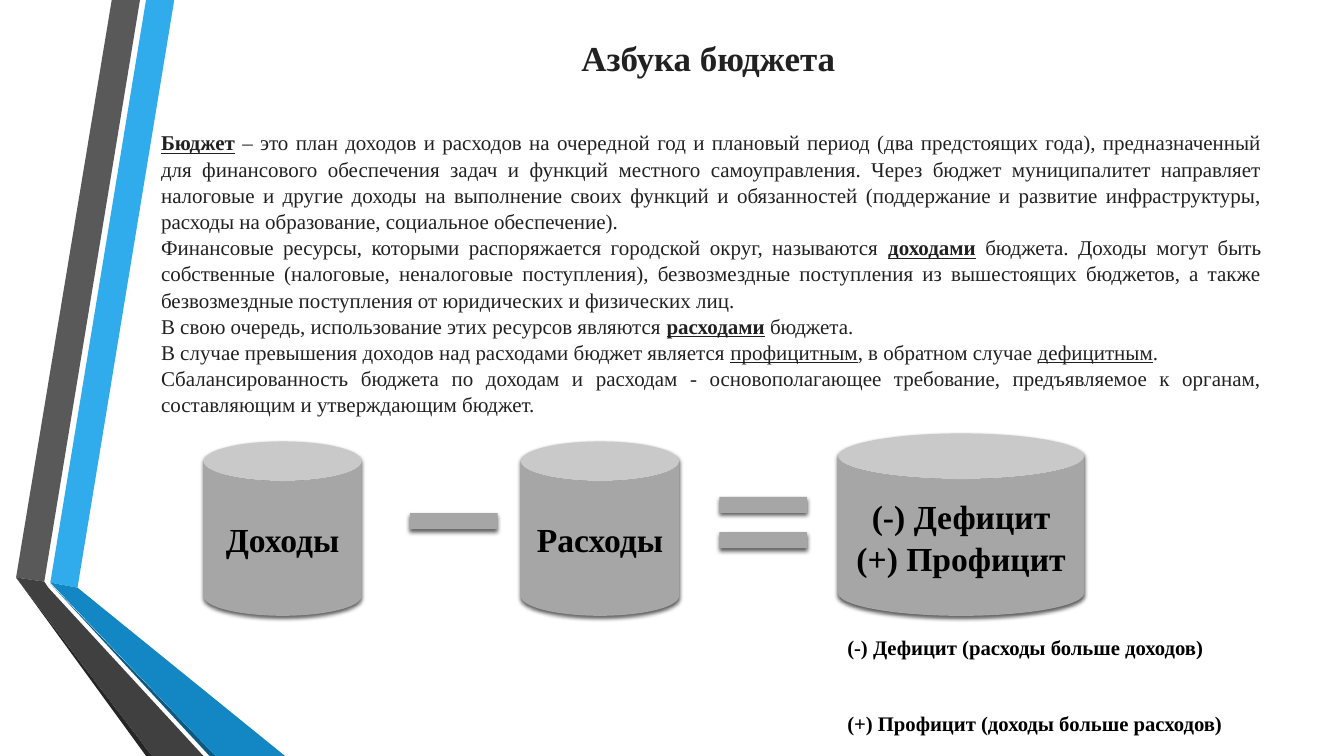
from pptx import Presentation
from pptx.dml.color import RGBColor
from pptx.enum.shapes import MSO_SHAPE as Preset
from pptx.enum.text import MSO_ANCHOR as Anchor, MSO_AUTO_SIZE as AutoSize, PP_ALIGN as Align
from pptx.oxml import parse_xml
from pptx.oxml.ns import nsdecls
from pptx.util import Pt

PX = 9144
FONT = "Times New Roman"
GRAY, BLACK, INK = "A6A6A6", "000000", "212121"
KEY_TERM = {"bold": True, "underline": True}
UNDERLINED = {"underline": True}

RIBBONS = [
    ("30ACEC", [(50, 578), (77, 583), (173, 0), (145, 0)]),
    ("595959", [(139, 0), (111, 0), (16, 573), (44, 577)]),
    ("262626", [(16, 573), (145, 750), (151, 750)]),
    ("0C5A82", [(50, 579), (208, 750), (214, 750)]),
    ("1287C3", [(50, 578), (214, 750), (283, 750), (77, 583)]),
    ("404040", [(202, 750), (48, 583), (44, 577), (16, 573), (151, 750)]),
]

DEFINITIONS = [
    [("Бюджет", KEY_TERM),
     (" – это план доходов и расходов на очередной год и плановый период (два предстоящих года), "
      "предназначенный для финансового обеспечения задач и функций местного самоуправления. "
      "Через бюджет муниципалитет направляет налоговые и другие доходы на выполнение своих функций "
      "и обязанностей (поддержание и развитие инфраструктуры, расходы на образование, "
      "социальное обеспечение).", {})],
    [("Финансовые ресурсы, которыми распоряжается городской округ, называются ", {}),
     ("доходами", KEY_TERM),
     (" бюджета. Доходы могут быть собственные (налоговые, неналоговые поступления), "
      "безвозмездные поступления из вышестоящих бюджетов, а также безвозмездные поступления "
      "от юридических и физических лиц.", {})],
    [("В свою очередь, использование этих ресурсов являются ", {}),
     ("расходами", KEY_TERM),
     (" бюджета.", {})],
    [("В случае превышения доходов над расходами бюджет является ", {}),
     ("профицитным", UNDERLINED),
     (", в обратном случае ", {}),
     ("дефицитным", UNDERLINED),
     (".", {})],
    [("Сбалансированность бюджета по доходам и расходам - основополагающее требование, "
      "предъявляемое к органам, составляющим и утверждающим бюджет.", {})],
]

CANS = [
    ((202, 438, 157, 173), ["Доходы"]),
    ((517, 438, 157, 173), ["Расходы"]),
    ((832, 430, 244, 181), ["(-) Дефицит", "(+) Профицит"]),
]
SIGN_BARS = [(407, 509), (714, 493), (714, 528)]
LEGEND = ["(-) Дефицит (расходы больше доходов)", "(+) Профицит (доходы больше расходов)"]


def rgb(color):
    return RGBColor.from_string(color)


def emu(*lengths):
    return [length * PX for length in lengths]


def place(shape, box):
    shape.left, shape.top, shape.width, shape.height = emu(*box)


def paint(shape, color):
    shape.shadow.inherit = False
    shape.fill.solid()
    shape.fill.fore_color.rgb = rgb(color)
    shape.line.fill.background()


def write_text(frame, paragraphs, *, size, color=BLACK, bold=False, align=Align.LEFT,
               anchor=Anchor.MIDDLE, line_spacing=1.0, gap=0):
    frame.word_wrap = True
    frame.auto_size = AutoSize.NONE
    frame.vertical_anchor = anchor
    for index, runs in enumerate(paragraphs):
        paragraph = frame.add_paragraph() if index else frame.paragraphs[0]
        paragraph.alignment = align
        paragraph.line_spacing = line_spacing
        paragraph.space_before = Pt(gap if index else 0)
        paragraph.space_after = Pt(0)
        for text, style in runs:
            run = paragraph.add_run()
            run.text = text
            run.font.name = FONT
            run.font.size = Pt(size)
            run.font.color.rgb = rgb(color)
            run.font.bold = style.get("bold", bold)
            run.font.underline = style.get("underline", False)


def plain(lines):
    return [[(line, {})] for line in lines]


def remove_bullets(frame):
    for paragraph in frame.paragraphs:
        properties = paragraph._p.get_or_add_pPr()
        properties.set("marL", "0")
        properties.set("indent", "0")
        properties.append(parse_xml(f"<a:buNone {nsdecls('a')}/>"))


def add_ribbon(slide, color, points):
    builder = slide.shapes.build_freeform(*points[0], scale=PX)
    builder.add_line_segments(points[1:], close=True)
    paint(builder.convert_to_shape(), color)


def add_raised_shape(slide, preset, box):
    shape = slide.shapes.add_shape(preset, *emu(*box))
    paint(shape, GRAY)
    effects = shape._element.spPr.find("{*}effectLst")
    effects.append(parse_xml(
        f'<a:outerShdw {nsdecls("a")} blurRad="{Pt(3)}" dist="{Pt(2)}" dir="5400000" rotWithShape="0">'
        f'<a:srgbClr val="{BLACK}"><a:alpha val="64000"/></a:srgbClr></a:outerShdw>'))
    return shape


def add_can(slide, box, lines):
    can = add_raised_shape(slide, Preset.CAN, box)
    write_text(can.text_frame, plain(lines), size=24, bold=True,
               align=Align.CENTER, line_spacing=1.04)


def main():
    presentation = Presentation()
    presentation.slide_width, presentation.slide_height = emu(1334, 750)
    slide = presentation.slides.add_slide(presentation.slide_layouts[1])

    for color, points in RIBBONS:
        add_ribbon(slide, color, points)

    title = slide.shapes.title
    place(title, (139, 30, 1128, 54))
    write_text(title.text_frame, plain(["Азбука бюджета"]), size=25, color=INK,
               bold=True, align=Align.CENTER)

    legend = slide.placeholders[1]
    place(legend, (831, 631, 426, 98))
    write_text(legend.text_frame, plain(LEGEND), size=14.8, bold=True, gap=36.5)
    remove_bullets(legend.text_frame)

    definitions = slide.shapes.add_textbox(*emu(150, 123, 1112, 288))
    write_text(definitions.text_frame, DEFINITIONS, size=15, color=INK,
               align=Align.JUSTIFY, anchor=Anchor.TOP, line_spacing=1.04)

    for box, lines in CANS:
        add_can(slide, box, lines)
    for left, top in SIGN_BARS:
        add_raised_shape(slide, Preset.RECTANGLE, (left, top, 87, 16))

    presentation.save("out.pptx")


if __name__ == "__main__":
    main()
